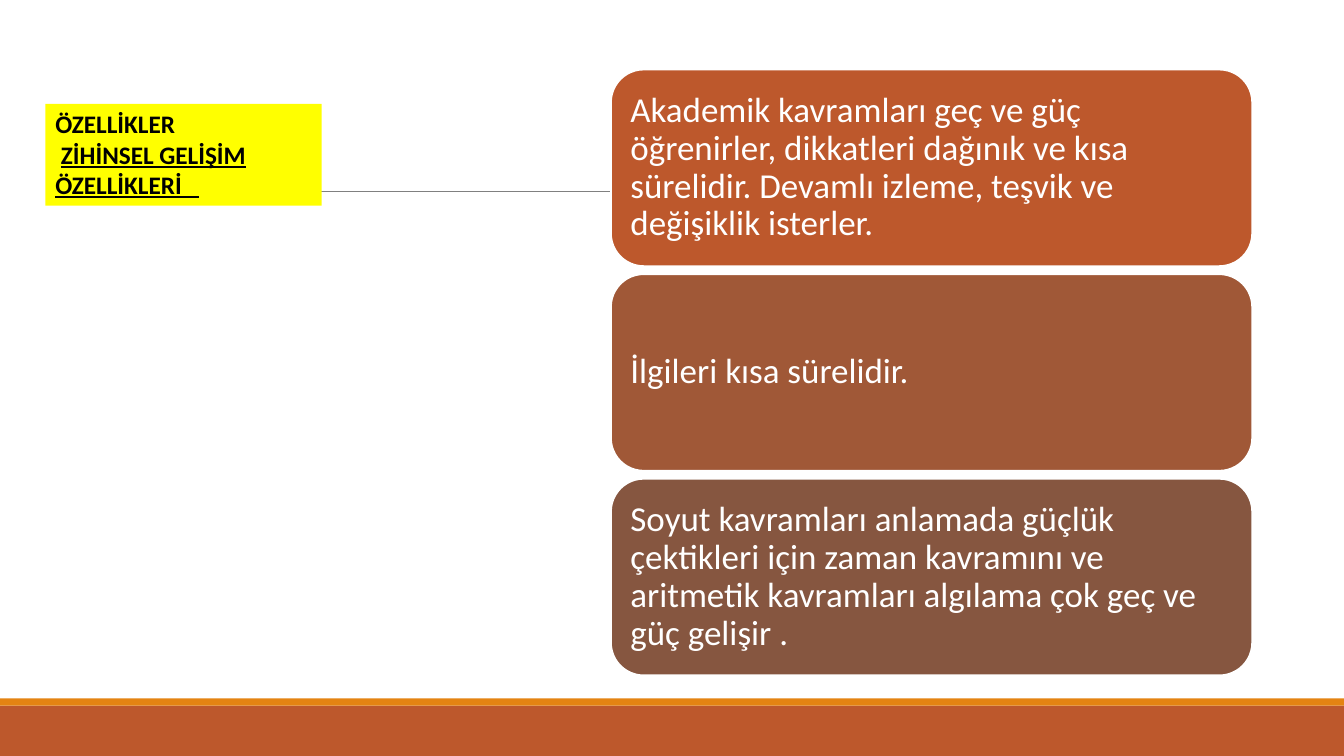
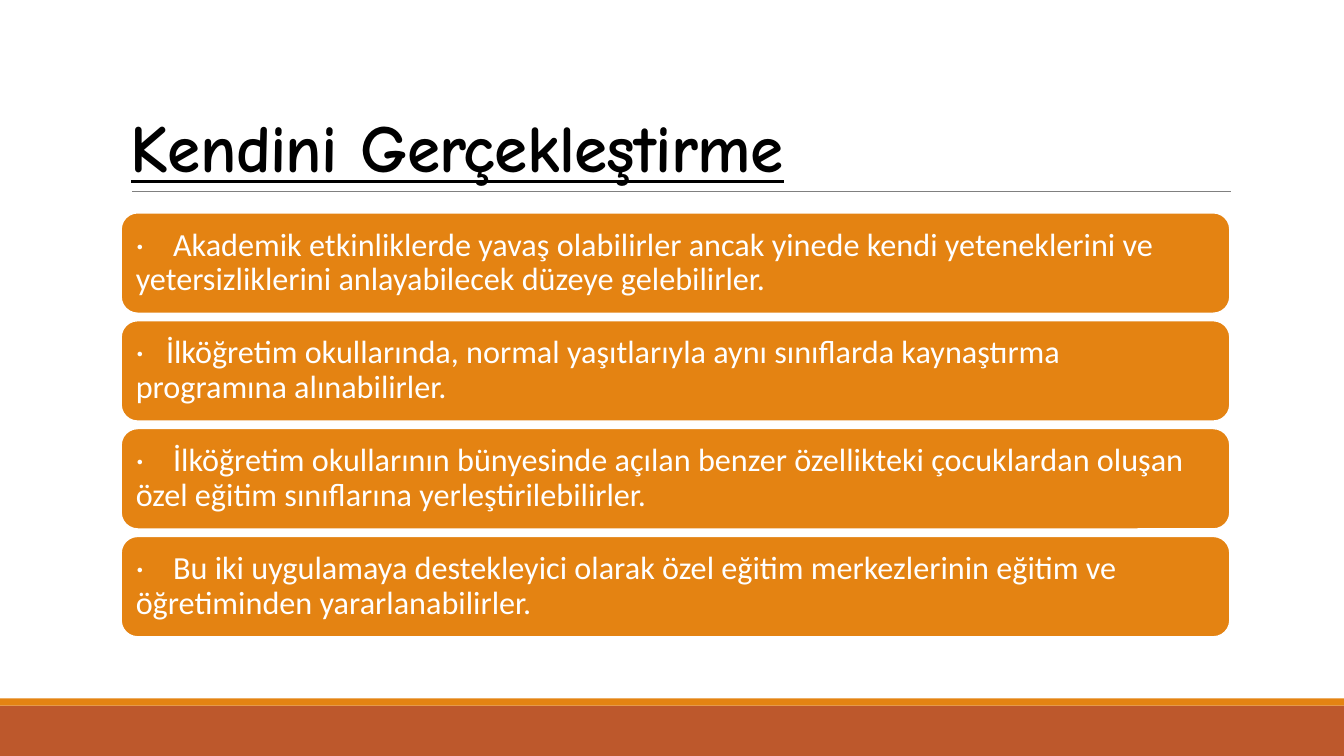
from lxml import etree
from pptx import Presentation
from pptx.dml.color import RGBColor
from pptx.enum.shapes import MSO_CONNECTOR, MSO_SHAPE
from pptx.enum.text import MSO_ANCHOR, PP_ALIGN
from pptx.oxml.ns import qn
from pptx.util import Inches, Pt

WHITE = RGBColor(0xFF, 0xFF, 0xFF)
BLACK = RGBColor(0x00, 0x00, 0x00)
GRAY = RGBColor(0x80, 0x80, 0x80)
YELLOW = RGBColor(0xFF, 0xFF, 0x00)
ORANGE = RGBColor(0xE4, 0x83, 0x12)
RUST = RGBColor(0xBD, 0x58, 0x2C)
BROWN = RGBColor(0xA0, 0x58, 0x37)
DARK_BROWN = RGBColor(0x86, 0x56, 0x40)

BODY_FONT = "Calibri"
TITLE_FONT = "Comic Neue"


class Deck:
    """Holds the shared style and the current slide."""

    def __init__(self):
        self.presentation = Presentation()
        self.presentation.slide_width = Inches(13.33)
        self.presentation.slide_height = Inches(7.5)
        self.slide = None

    def new_slide(self):
        layout = self.presentation.slide_layouts[6]
        self.slide = self.presentation.slides.add_slide(layout)
        # Footer bands and title rule
        self.shape(MSO_SHAPE.RECTANGLE, 0, 7, 13.33, 0.5, RUST)
        self.shape(MSO_SHAPE.RECTANGLE, 0, 6.93, 13.33, 0.07, ORANGE)
        self.rule(1.31, 12.21, 1.9)

    def shape(self, kind, left, top, width, height, fill, outline=None):
        shape = self.slide.shapes.add_shape(
            kind, Inches(left), Inches(top), Inches(width), Inches(height))
        shape.shadow.inherit = False
        shape.fill.solid()
        shape.fill.fore_color.rgb = fill
        if outline is None:
            shape.line.fill.background()
        else:
            shape.line.color.rgb = outline
            shape.line.width = Pt(1.25)
        return shape

    def rule(self, left, right, top):
        line = self.slide.shapes.add_connector(
            MSO_CONNECTOR.STRAIGHT, Inches(left), Inches(top), Inches(right), Inches(top))
        line.line.color.rgb = GRAY
        line.line.width = Pt(0.5)
        etree.SubElement(line._element.spPr, qn("a:effectLst"))

    def format_runs(self, paragraph, font, size, color, bold=False):
        paragraph.alignment = PP_ALIGN.LEFT
        for run in paragraph.runs:
            run.font.name = font
            run.font.size = Pt(size)
            run.font.color.rgb = color
            run.font.bold = bold

    def title(self, text):
        box = self.slide.shapes.add_textbox(Inches(1.2), Inches(0.31), Inches(11), Inches(1.59))
        frame = box.text_frame
        frame.word_wrap = True
        frame.vertical_anchor = MSO_ANCHOR.BOTTOM
        frame.text = text
        paragraph = frame.paragraphs[0]
        paragraph.line_spacing = 0.85
        self.format_runs(paragraph, TITLE_FONT, 48, BLACK, bold=True)
        font = paragraph.runs[0].font
        font.underline = True
        font._element.set("spc", "-50")

    def label(self, heading, topic, left, top, width, height):
        shape = self.shape(MSO_SHAPE.RECTANGLE, left, top, width, height, YELLOW)
        shape.text_frame.word_wrap = True
        shape.text_frame.vertical_anchor = MSO_ANCHOR.TOP
        paragraph = shape.text_frame.paragraphs[0]
        paragraph.text = heading
        topic_run = paragraph.add_run()
        topic_run.text = topic
        topic_run.font.underline = True
        self.format_runs(paragraph, BODY_FONT, 18, BLACK, bold=True)

    def card(self, text, left, top, width, height, fill, size, tab=None):
        shape = self.shape(MSO_SHAPE.ROUNDED_RECTANGLE, left, top, width, height, fill, WHITE)
        frame = shape.text_frame
        frame.word_wrap = True
        frame.vertical_anchor = MSO_ANCHOR.MIDDLE
        frame.margin_left = frame.margin_right = Inches(0.1)
        frame.margin_top = frame.margin_bottom = Inches(0.1)
        frame.text = text
        paragraph = frame.paragraphs[0]
        paragraph.line_spacing = 0.9
        self.format_runs(paragraph, BODY_FONT, size, WHITE)
        if tab is not None:
            # Gap between the dot and the first word
            tabs = etree.SubElement(paragraph._p.get_or_add_pPr(), qn("a:tabLst"))
            etree.SubElement(tabs, qn("a:tab"), pos=str(Inches(tab)), algn="l")


def build_mental_development(deck):
    deck.new_slide()
    traits = [
        ("Akademik kavramları geç ve güç öğrenirler, dikkatleri dağınık ve kısa sürelidir. "
         "Devamlı izleme, teşvik ve değişiklik isterler.", RUST),
        ("İlgileri kısa sürelidir.", BROWN),
        ("Soyut kavramları anlamada güçlük çektikleri için zaman kavramını ve aritmetik "
         "kavramları algılama çok geç ve güç gelişir .", DARK_BROWN),
    ]
    for index, (text, fill) in enumerate(traits):
        deck.card(text, 6.06, 0.69 + 2.03 * index, 6.36, 1.95, fill, 25)
    deck.label("ÖZELLİKLER\v ", "ZİHİNSEL GELİŞİM ÖZELLİKLERİ   ", 0.45, 1.03, 2.74, 1.01)


def build_self_realization(deck):
    deck.new_slide()
    deck.title("Kendini Gerçekleştirme")
    statements = [
        ("Akademik etkinliklerde yavaş olabilirler ancak yinede kendi yeteneklerini ve "
         "yetersizliklerini anlayabilecek düzeye gelebilirler.", 0.37),
        ("İlköğretim okullarında, normal yaşıtlarıyla aynı sınıflarda kaynaştırma "
         "programına alınabilirler.", 0.3),
        ("İlköğretim okullarının bünyesinde açılan benzer özellikteki çocuklardan oluşan "
         "özel eğitim sınıflarına yerleştirilebilirler.", 0.37),
        ("Bu iki uygulamaya destekleyici olarak özel eğitim merkezlerinin eğitim ve "
         "öğretiminden yararlanabilirler.", 0.37),
    ]
    for index, (text, tab) in enumerate(statements):
        deck.card(f"·\t{text}", 1.2, 2.11 + 1.07 * index, 11, 1, ORANGE, 23, tab)


def main():
    deck = Deck()
    build_mental_development(deck)
    build_self_realization(deck)
    deck.presentation.save("out.pptx")


if __name__ == "__main__":
    main()
